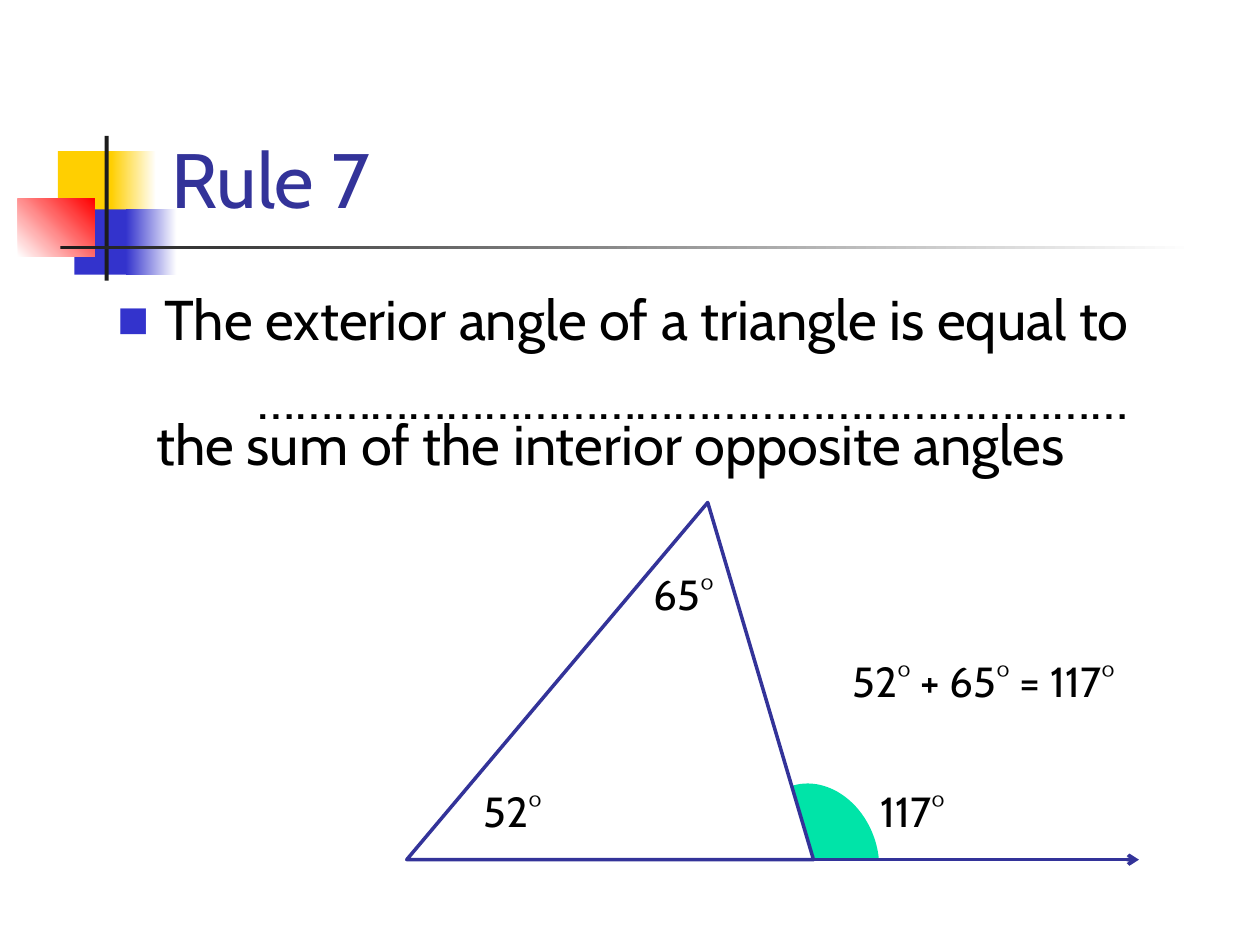
from lxml import etree
from pptx import Presentation
from pptx.dml.color import RGBColor
from pptx.enum import shapes, text
from pptx.oxml.ns import qn
from pptx.util import Cm, Pt

FONT = "Cabin"
NAVY, BLUE, GOLD, DARK = "333399", "3333CC", "FFCF01", "1C1C1C"
WHITE, RED, GREEN, BLACK = "FFFFFF", "FF0000", "00E4A8", "000000"

# Content, with places in cm: left, top, width, height
TITLE = ("Rule 7", (3.2, 0.58, 8.5, 4.07))
RULE = "The exterior angle of a triangle is equal to"
DOTS = "……………………………………………………………"
BODY = (2.11, 5.61, 22.78, 5.72)
ANSWER = ("the sum of the interior opposite angles", (2.9, 8.13, 20.07, 1.63))
LABELS = [
    ("65°", 12.93, 11.33, 1.85),
    ("52°", 9.5, 15.72, 1.85),
    ("117°", 17.5, 15.72, 2.31),
    ("52° + 65° = 117°", 16.94, 13.08, 7.57),
]
# Place, colours (two make a gradient), angle
DECOR = [
    ((1.17, 3.05, 1.22, 1.32), [GOLD], 0),
    ((2.24, 3.05, 0.91, 1.32), [GOLD, WHITE], 0),
    ((1.5, 4.22, 1.17, 1.32), [BLUE], 0),
    ((2.54, 4.22, 1.02, 1.32), [BLUE, WHITE], 0),
    ((0.36, 4.01, 1.55, 1.17), [WHITE, RED], 45),
    ((2.11, 2.74, 0.08, 2.92), [DARK], 0),
    ((1.22, 4.95, 22.86, 0.08), [DARK, WHITE], 0),
]
TRI = (8.2, 10.13, 8.2, 7.2)
PIE = (15.16, 15.77, 2.54, 3.1)
RAY = (9.9, 22.96)
INDENT = Cm(0.95)

prs = Presentation()
prs.slide_width, prs.slide_height = Cm(25.4), Cm(19.05)
slide = prs.slides.add_slide(prs.slide_layouts[1])


def rgb(code):
    return RGBColor.from_string(code)


def place(shape, box):
    shape.left, shape.top, shape.width, shape.height = map(Cm, box)


def write(par, words, size=24, color=BLACK, align=text.PP_ALIGN.LEFT, before=0):
    par.text = words
    par.alignment = align
    par.space_before = Pt(before)
    font = par.font
    font.name, font.size = FONT, Pt(size)
    font.color.rgb = rgb(color)


def label(words, box, **style):
    frame = slide.shapes.add_textbox(*map(Cm, box)).text_frame
    frame.word_wrap = True
    write(frame.paragraphs[0], words, **style)


def draw(kind, box, colors, angle=0, line=None):
    shape = slide.shapes.add_shape(kind, *map(Cm, box))
    shape.shadow.inherit = False
    if len(colors) == 1:
        shape.fill.solid()
        shape.fill.fore_color.rgb = rgb(colors[0])
    else:
        shape.fill.gradient()
        shape.fill.gradient_angle = angle
        for stop, color in zip(shape.fill.gradient_stops, colors):
            stop.color.rgb = rgb(color)
    if line:
        shape.line.color.rgb = rgb(line)
        shape.line.width = Pt(2)
    else:
        shape.line.fill.background()
    return shape


def bullet(par, char=None):
    props = par._p.get_or_add_pPr()
    props.set("marL", str(INDENT))
    props.set("indent", str(-INDENT if char else 0))
    if not char:
        etree.SubElement(props, qn("a:buNone"))
        return
    tint = etree.SubElement(props, qn("a:buClr"))
    etree.SubElement(tint, qn("a:srgbClr"), val=BLUE)
    etree.SubElement(props, qn("a:buSzPct"), val="60000")
    etree.SubElement(props, qn("a:buFont"), typeface=FONT)
    etree.SubElement(props, qn("a:buChar"), char=char)


# Corner blocks and rules
for box, colors, angle in DECOR:
    draw(shapes.MSO_SHAPE.RECTANGLE, box, colors, angle)

# Title
title = slide.shapes.title
place(title, TITLE[1])
title.text_frame.vertical_anchor = text.MSO_ANCHOR.BOTTOM
title.text_frame.auto_size = text.MSO_AUTO_SIZE.NONE
write(title.text_frame.paragraphs[0], TITLE[0], size=44, color=NAVY)

# Rule with its dotted blank and answer
body = slide.placeholders[1]
place(body, BODY)
frame = body.text_frame
frame.auto_size = text.MSO_AUTO_SIZE.NONE
first, second = frame.paragraphs[0], frame.add_paragraph()
bullet(first, "■")
write(first, RULE, size=32)
bullet(second)
write(second, DOTS, size=32, align=text.PP_ALIGN.CENTER, before=6.4)
label(*ANSWER, size=32)

# Exterior angle, behind the triangle
pie = draw(shapes.MSO_SHAPE.PIE, PIE, [GREEN])
pie.rotation = 342.4
pie.adjustments[0], pie.adjustments[1] = 161.99, 10.96

# Triangle and its extended base
tri = draw(shapes.MSO_SHAPE.ISOSCELES_TRIANGLE, TRI, [WHITE], line=NAVY)
tri.adjustments[0] = 0.74
base = Cm(TRI[1] + TRI[3])
ray = slide.shapes.add_connector(
    shapes.MSO_CONNECTOR.STRAIGHT, Cm(RAY[0]), base, Cm(RAY[1]), base)
ray.line.color.rgb = rgb(NAVY)
ray.line.width = Pt(2)
etree.SubElement(ray.line._get_or_add_ln(), qn("a:tailEnd"), type="arrow")
etree.SubElement(ray._element.spPr, qn("a:effectLst"))

# Angle labels
for words, left, top, width in LABELS:
    label(words, (left, top, width, 1.3))

prs.save("out.pptx")
